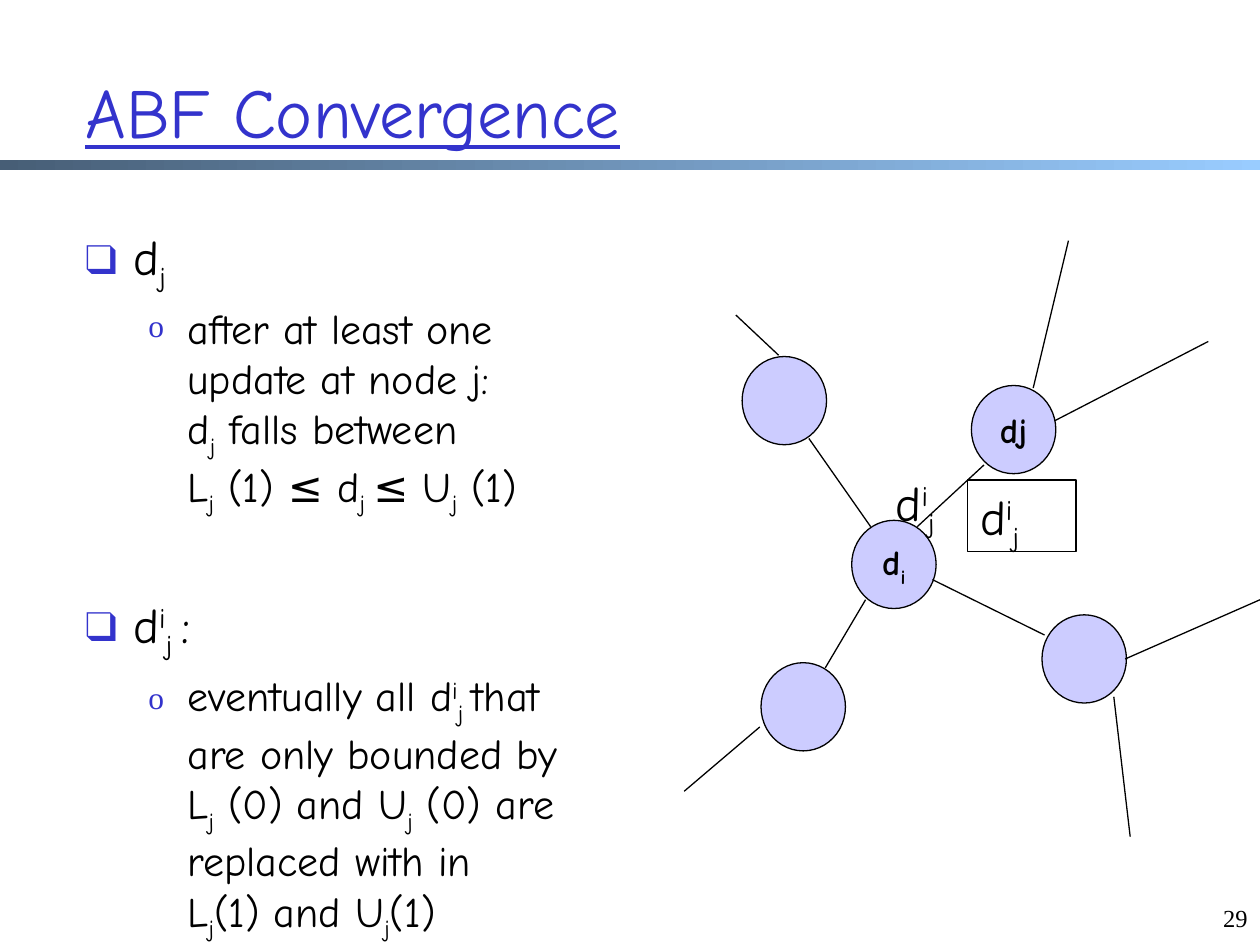
from lxml.etree import SubElement
from pptx import Presentation
from pptx.dml.color import RGBColor
from pptx.enum.shapes import MSO_CONNECTOR, MSO_SHAPE
from pptx.enum.text import MSO_ANCHOR, PP_ALIGN
from pptx.oxml.ns import qn
from pptx.util import Inches, Pt

COLUMNS, ROWS = 100, 75
CELL = Inches(10) // COLUMNS
HAND, SERIF = "Comic Neue", "Times New Roman"
BLUE, BLACK, LILAC = "3333CC", "000000", "CCCCFF"
SUB, SUP = -25, 30
D_J = [("d", 0), ("j", SUB)]
D_IJ = [("d", 0), ("i", SUP), ("j", SUB)]


def color(value):
    return RGBColor.from_string(value)


def cells(*counts):
    return [round(count * CELL) for count in counts]


def within(box, left, top, width, height):
    return box[0] + left, box[1] + top, width, height


def style_font(para, size, name=HAND, value=BLACK):
    para.font.size = Pt(size)
    para.font.name = name
    para.font.color.rgb = color(value)


def add_spans(para, spans):
    for text, shift in spans:
        for number, line in enumerate(text.split("\n")):
            if number:
                para.add_line_break()
            if line:
                span = para.add_run()
                span.text = line
                if shift:
                    span.font._element.set("baseline", str(shift * 1000))


def add_text(page, box, spans, size, name=HAND, value=BLACK, wrap=True):
    shape = page.shapes.add_textbox(*cells(*box))
    shape.text_frame.word_wrap = wrap
    para = shape.text_frame.paragraphs[0]
    style_font(para, size, name, value)
    add_spans(para, spans)
    return shape


def add_outline(shape):
    shape.line.color.rgb = color(BLACK)
    shape.line.width = Pt(0.75)


def add_bullet(para, mark, size, indent, hanging):
    properties = para._p.get_or_add_pPr()
    properties.set("marL", str(Inches(indent)))
    properties.set("indent", str(-Inches(hanging)))
    bullet_color = SubElement(properties, qn("a:buClr"))
    SubElement(bullet_color, qn("a:srgbClr"), val=BLUE)
    SubElement(properties, qn("a:buSzPct"), val=str(size * 1000))
    SubElement(properties, qn("a:buFont"), typeface=SERIF)
    SubElement(properties, qn("a:buChar"), char=mark)


def add_heading(page, box):
    title = add_text(page, within(box, 5.8, 2.5, 87.8, 12.5),
                     [("ABF Convergence", 0)], 40, value=BLUE)
    title.text_frame.vertical_anchor = MSO_ANCHOR.MIDDLE
    title.text_frame.paragraphs[0].font.underline = True
    rule = page.shapes.add_shape(
        MSO_SHAPE.RECTANGLE, *cells(*within(box, 0, 12.7, box[2], 0.8)))
    rule.shadow.inherit = False
    rule.line.fill.background()
    rule.fill.gradient()
    rule.fill.gradient_angle = 0
    for stop, value in zip(rule.fill.gradient_stops, ("475E76", "99CCFF")):
        stop.color.rgb = color(value)


def add_points(page, box):
    points = [
        (0, 5.6, D_J),
        (1, 4.8, [("after at least one \nupdate at node j: \nd", 0), ("j", SUB),
                  (" falls between \nL", 0), ("j", SUB), (" (1) ≤ d", 0),
                  ("j ", SUB), ("≤ U", 0), ("j", SUB), (" (1)", 0)]),
        (0, 44, [("d", 0), ("i", SUP), ("j ", SUB), (":", 0)]),
        (1, 4.8, [("eventually all d", 0), ("i", SUP), ("j ", SUB),
                  ("that \nare only bounded by \nL", 0), ("j", SUB),
                  (" (0) and U", 0), ("j", SUB),
                  (" (0) are \nreplaced with in\nL", 0), ("j", SUB),
                  ("(1) and U", 0), ("j", SUB), ("(1)", 0)]),
    ]
    levels = [(28, "❑", 85, 0.38, 0.38), (24, "o", 75, 0.81, 0.31)]
    frame = page.shapes.add_textbox(*cells(*box)).text_frame
    frame.word_wrap = True
    for number, (level, gap, spans) in enumerate(points):
        para = frame.add_paragraph() if number else frame.paragraphs[0]
        size, mark, mark_size, indent, hanging = levels[level]
        para.level = level
        para.space_before = Pt(gap)
        add_bullet(para, mark, mark_size, indent, hanging)
        style_font(para, size)
        add_spans(para, spans)


def add_node(page, box, spans):
    node = page.shapes.add_shape(MSO_SHAPE.OVAL, *cells(*box))
    node.shadow.inherit = False
    node.fill.solid()
    node.fill.fore_color.rgb = color(LILAC)
    add_outline(node)
    if spans:
        frame = node.text_frame
        frame.word_wrap = False
        frame.vertical_anchor = MSO_ANCHOR.MIDDLE
        para = frame.paragraphs[0]
        para.alignment = PP_ALIGN.CENTER
        style_font(para, 20)
        para.font.bold = True
        add_spans(para, spans)


def add_link(page, box, start_x, start_y, end_x, end_y):
    left, top = box[:2]
    link = page.shapes.add_connector(
        MSO_CONNECTOR.STRAIGHT,
        *cells(left + start_x, top + start_y, left + end_x, top + end_y))
    add_outline(link)
    SubElement(link._element.spPr, qn("a:effectLst"))


def add_network(page, box):
    nodes = [
        (13.6, 22.3, [("d", 0), ("i", SUB)]),
        (23.1, 11.6, [("dj", 0)]),
        (28.7, 29.8, []),
        (6.4, 33.6, []),
        (4.9, 9.3, []),
    ]
    links = [
        (18.8, 22.8, 24.1, 17.9), (15.1, 22.8, 10.2, 15.8),
        (11.5, 34, 14.7, 28.6), (20, 27, 28.9, 31.4),
        (28, 11.8, 30.8, 0.1), (29.7, 14.4, 41.9, 8.1),
        (7.8, 9.2, 4.4, 6), (6.3, 38.7, 0.3, 43.8),
        (34.4, 36.3, 35.7, 47.4), (35.3, 33.3, 46, 28.6),
    ]
    for left, top, spans in nodes:
        add_node(page, within(box, left, top, 6.7, 7), spans)
    for link in links:
        add_link(page, box, *link)
    add_text(page, within(box, 16.1, 18, 7.3, 5.7), D_IJ, 28)
    add_outline(add_text(page, within(box, 22.8, 19.1, 8.6, 5.7), D_IJ, 28))


def add_page_number(page, box):
    number = add_text(page, box, [("29", 0)], 14, SERIF)
    number.text_frame.paragraphs[0].alignment = PP_ALIGN.RIGHT


def main():
    deck = Presentation()
    deck.slide_width, deck.slide_height = cells(COLUMNS, ROWS)
    page = deck.slides.add_slide(deck.slide_layouts[6])
    add_heading(page, (0, 0, COLUMNS, 15))
    add_points(page, (5.8, 17.5, 61.6, 53.1))
    add_network(page, (54, 19, 46, 48))
    add_page_number(page, (95, 71.2, 5, 3.8))
    deck.save("out.pptx")


if __name__ == "__main__":
    main()
